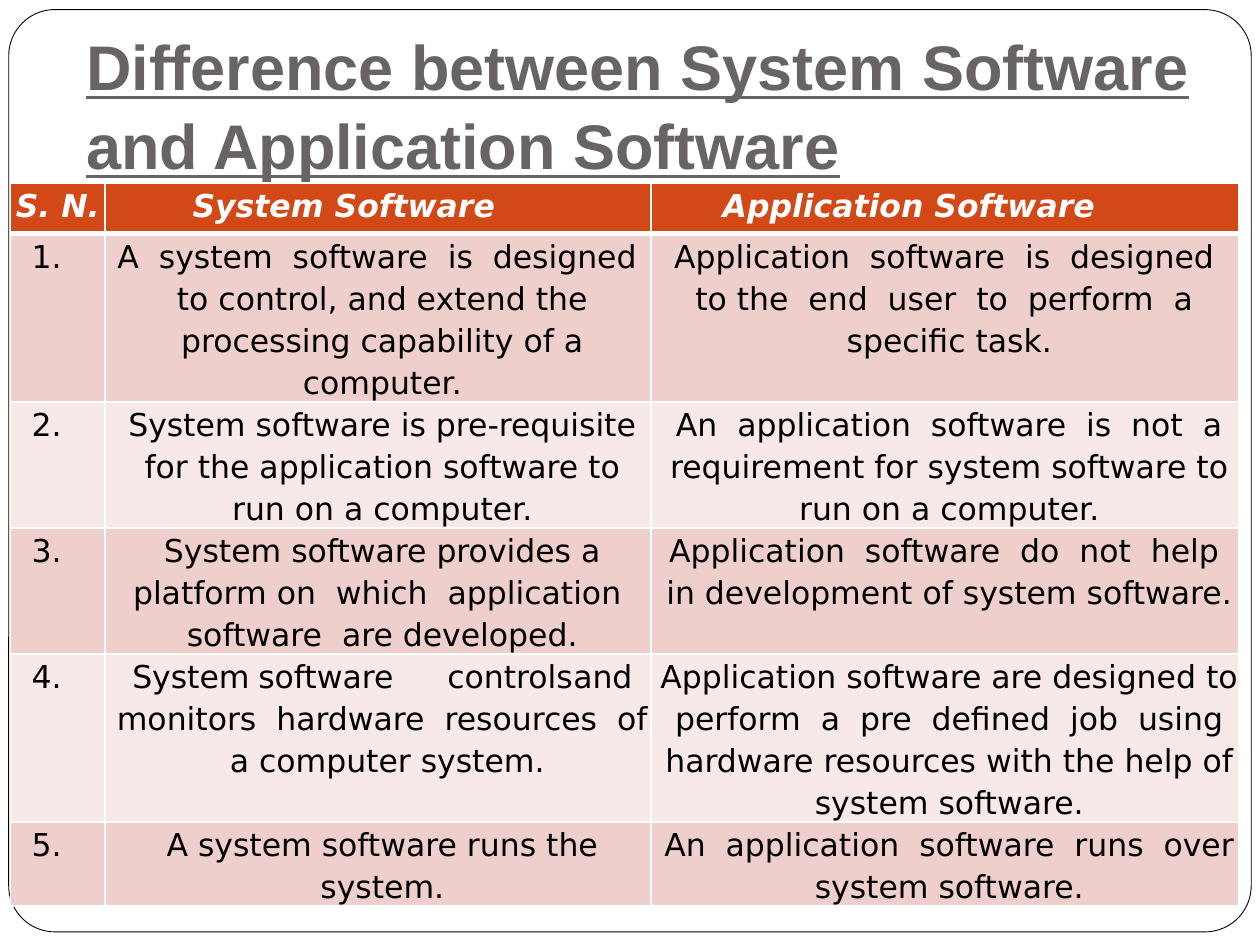
import pptx
import pptx.util
import pptx.dml.color
import pptx.enum.shapes
import pptx.enum.text
import lxml.etree

Pt = pptx.util.Pt
ALIGN = pptx.enum.text.PP_ALIGN
ANCHOR = pptx.enum.text.MSO_ANCHOR

TITLE = "Difference between System Software and Application Software"
HEADERS = ["S. N.", "System Software", "Application Software"]
ROWS = [
    ("A  system  software  is  designed  to control, and extend the processing capability of a computer.",
     "Application  software  is  designed  to the  end  user  to  perform  a  specific task."),
    ("System software is pre-requisite for the application software to run on a computer.",
     "An  application  software  is  not  a requirement for system software to run on a computer."),
    ("System software provides a platform on  which  application  software  are developed.",
     "Application  software  do  not  help  in development of system software."),
    ("System\tsoftware\tcontrols\tand monitors  hardware  resources  of  a computer system.",
     "Application software are designed to perform  a  pre  defined  job  using hardware resources with the help of system software."),
    ("A system software runs the system.",
     "An  application  software  runs  over system software."),
]
COLUMNS = [54, 312, 336]
HEIGHTS = [29, 95, 71, 71, 95, 47]
HEADER_INDENTS = [3, 50, 41]
BODY_INDENTS = [12, 5, 5]
TAB_STOPS = [56, 115, 170]

THEME = {
    "title": "696464", "white": "FFFFFF", "black": "000000",
    "header": "D34817", "bands": ["EFCFCC", "F7E9E8"],
    "title_font": "Arial", "table_font": "DejaVu Sans",
    "title_size": 36, "table_size": 18,
}


def rgb(value):
    return pptx.dml.color.RGBColor.from_string(value)


def add_run(p, text, font, size, color, bold=False, italic=False, underline=False):
    r = p.add_run()
    r.text = text
    f = r.font
    f.name, f.size = font, Pt(size)
    f.bold, f.italic, f.underline = bold, italic, underline
    f.color.rgb = rgb(color)


def sub(parent, tag, **attrs):
    el = lxml.etree.SubElement(parent, pptx.oxml.ns.qn(tag))
    for name, value in attrs.items():
        el.set(name, str(value))
    return el


def set_borders(cell, bottom):
    tc_pr = cell._tc.get_or_add_tcPr()
    for i, (side, width) in enumerate([("L", 1), ("R", 1), ("T", 1), ("B", bottom)]):
        ln = sub(tc_pr, f"a:ln{side}", w=Pt(width))
        sub(sub(ln, "a:solidFill"), "a:srgbClr", val=THEME["white"])
        tc_pr.insert(i, ln)


def fill_cell(cell, text, row, col):
    header = row == 0
    cell.margin_left = cell.margin_right = cell.margin_top = cell.margin_bottom = 0
    cell.vertical_anchor = ANCHOR.TOP
    cell.fill.solid()
    cell.fill.fore_color.rgb = rgb(THEME["header"] if header else THEME["bands"][(row - 1) % 2])
    set_borders(cell, 3 if row == 0 else 1)
    p = cell.text_frame.paragraphs[0]
    p.alignment = ALIGN.LEFT if header or col == 0 else ALIGN.CENTER
    p.line_spacing = 1.15
    p.space_before = Pt(3.5 if header else 4.6)
    p_pr = p._p.get_or_add_pPr()
    p_pr.set("marL", str(Pt((HEADER_INDENTS if header else BODY_INDENTS)[col])))
    p_pr.set("indent", "0")
    if "\t" in text:
        tabs = sub(p_pr, "a:tabLst")
        for stop in TAB_STOPS:
            sub(tabs, "a:tab", pos=Pt(stop), algn="l")
    add_run(p, text, THEME["table_font"], THEME["table_size"],
            THEME["white"] if header else THEME["black"], bold=header, italic=header)


def add_frame(s, title):
    sp = s.shapes.add_shape(pptx.enum.shapes.MSO_SHAPE.ROUNDED_RECTANGLE,
                            Pt(5), Pt(5.5), Pt(710), Pt(527))
    sp.adjustments[0] = 0.05
    sp.shadow.inherit = False
    sp.fill.solid()
    sp.fill.fore_color.rgb = rgb(THEME["white"])
    sp.line.color.rgb = rgb(THEME["black"])
    sp.line.width = Pt(0.5)
    title._element.addprevious(sp._element)


def add_title(s):
    title = s.shapes.title
    title.left, title.top, title.width, title.height = Pt(42), Pt(21.5), Pt(648), Pt(90)
    tf = title.text_frame
    tf.word_wrap = True
    tf.auto_size = pptx.enum.text.MSO_AUTO_SIZE.NONE
    tf.vertical_anchor = ANCHOR.BOTTOM
    tf.margin_left = tf.margin_right = tf.margin_bottom = Pt(7.2)
    tf.margin_top = Pt(3.6)
    p = tf.paragraphs[0]
    p.alignment = ALIGN.LEFT
    p.line_spacing = 1.05
    add_run(p, TITLE, THEME["title_font"], THEME["title_size"], THEME["title"],
            bold=True, underline=True)
    return title


def add_comparison(s):
    grid = [HEADERS] + [(f"{n}.", *texts) for n, texts in enumerate(ROWS, 1)]
    table = s.shapes.add_table(len(grid), len(COLUMNS), Pt(6), Pt(104.5),
                               Pt(sum(COLUMNS)), Pt(sum(HEIGHTS))).table
    for column, width in zip(table.columns, COLUMNS):
        column.width = Pt(width)
    for row, (texts, height) in enumerate(zip(grid, HEIGHTS)):
        table.rows[row].height = Pt(height)
        for col, text in enumerate(texts):
            fill_cell(table.cell(row, col), text, row, col)


def main():
    prs = pptx.Presentation()
    prs.slide_width, prs.slide_height = Pt(720), Pt(540)
    s = prs.slides.add_slide(prs.slide_layouts[5])
    title = add_title(s)
    add_frame(s, title)
    add_comparison(s)
    prs.save("out.pptx")


if __name__ == "__main__":
    main()
